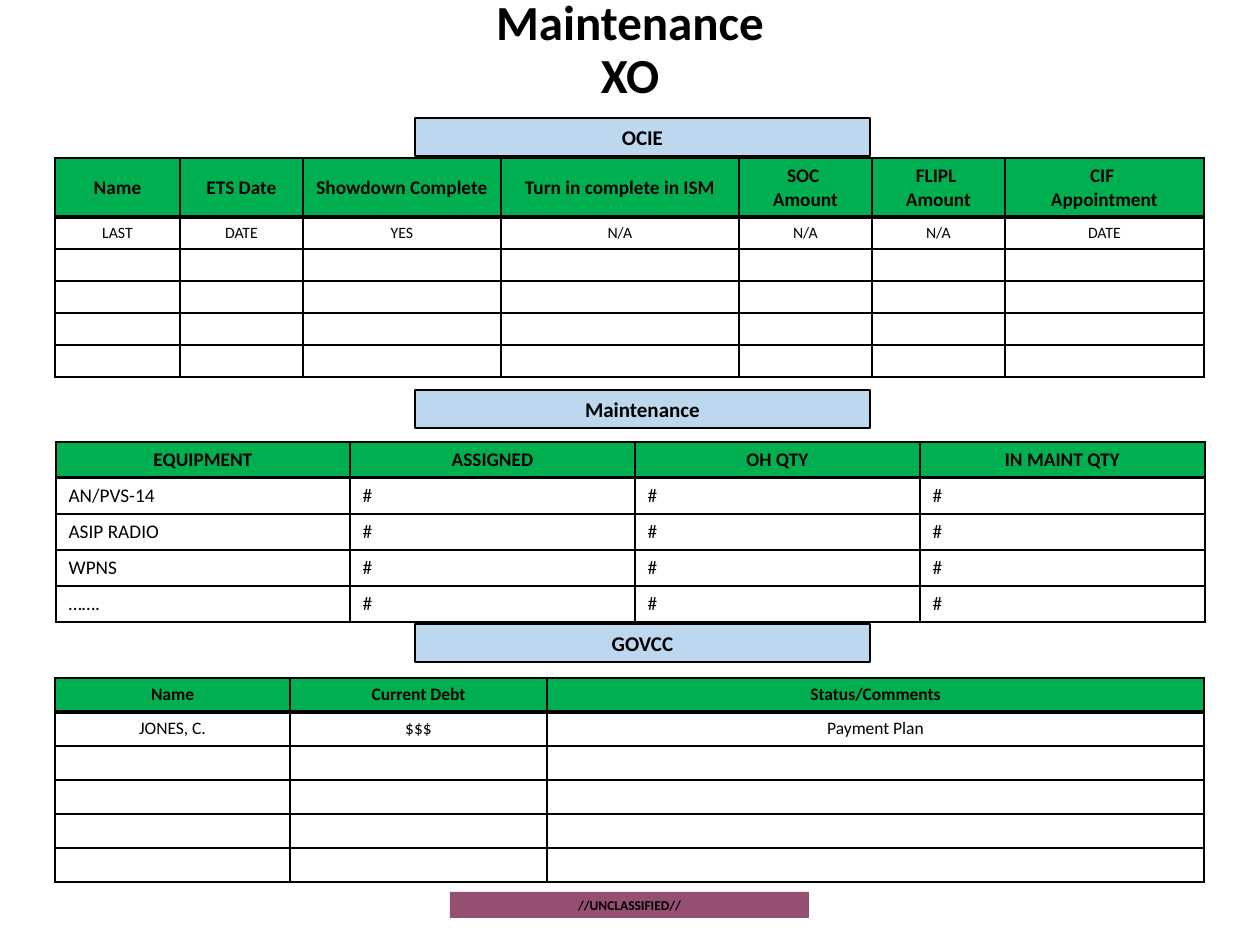
import lxml.etree
import pptx
import pptx.dml.color
import pptx.enum.shapes
import pptx.enum.text
import pptx.oxml.ns
import pptx.util

RGBColor = pptx.dml.color.RGBColor
BLACK = RGBColor(0x00, 0x00, 0x00)
WHITE = RGBColor(0xFF, 0xFF, 0xFF)
GREEN = RGBColor(0x00, 0xB0, 0x50)
LIGHT_BLUE = RGBColor(0xBD, 0xD7, 0xEE)
PLUM = RGBColor(0x95, 0x4F, 0x72)

CENTER = pptx.enum.text.PP_ALIGN.CENTER
LEFT = pptx.enum.text.PP_ALIGN.LEFT
MIDDLE = pptx.enum.text.MSO_ANCHOR.MIDDLE
PIXELS_PER_INCH = 126


def px(length):
    return pptx.util.Emu(round(length * 914400 / PIXELS_PER_INCH))


class SlideBuilder:
    font = "Calibri"

    def __init__(self, slide):
        self.slide = slide

    def add_run(self, paragraph, text, size, bold):
        run = paragraph.add_run()
        run.text = text
        run.font.name = self.font
        run.font.size = pptx.util.Pt(size)
        run.font.bold = bold
        run.font.color.rgb = BLACK

    def title(self, left, top, width, height, lines, size):
        shape = self.slide.shapes.add_textbox(px(left), px(top), px(width), px(height))
        frame = shape.text_frame
        frame.word_wrap = True
        frame.vertical_anchor = MIDDLE
        paragraph = frame.paragraphs[0]
        paragraph.alignment = CENTER
        paragraph.line_spacing = 0.9
        for index, line in enumerate(lines):
            if index:
                paragraph.add_line_break()
            self.add_run(paragraph, line, size, True)

    def box(self, left, top, width, height, text, size, fill, outlined=True):
        shape = self.slide.shapes.add_shape(
            pptx.enum.shapes.MSO_SHAPE.RECTANGLE, px(left), px(top), px(width), px(height))
        shape.shadow.inherit = False
        shape.fill.solid()
        shape.fill.fore_color.rgb = fill
        if outlined:
            shape.line.color.rgb = BLACK
            shape.line.width = pptx.util.Pt(1)
        else:
            shape.line.fill.background()
        frame = shape.text_frame
        frame.word_wrap = True
        frame.vertical_anchor = MIDDLE
        frame.margin_top = frame.margin_bottom = px(5)
        frame.paragraphs[0].alignment = CENTER
        self.add_run(frame.paragraphs[0], text, size, True)

    def borders(self, cell, bottom):
        properties = cell._tc.get_or_add_tcPr()
        widths = {"a:lnL": 1, "a:lnR": 1, "a:lnT": 1, "a:lnB": bottom}
        for index, (tag, width) in enumerate(widths.items()):
            line = lxml.etree.Element(pptx.oxml.ns.qn(tag), w=str(pptx.util.Pt(width)))
            fill = lxml.etree.SubElement(line, pptx.oxml.ns.qn("a:solidFill"))
            lxml.etree.SubElement(fill, pptx.oxml.ns.qn("a:srgbClr"), val=str(BLACK))
            properties.insert(index, line)

    def cell(self, cell, text, size, header, alignment):
        cell.fill.solid()
        cell.fill.fore_color.rgb = GREEN if header else WHITE
        cell.vertical_anchor = MIDDLE
        self.borders(cell, 2 if header else 1)
        for index, line in enumerate(text.split("\n")):
            frame = cell.text_frame
            paragraph = frame.add_paragraph() if index else frame.paragraphs[0]
            paragraph.alignment = alignment
            if line:
                self.add_run(paragraph, line, size, header)
            else:  # keeps an empty row as low as a filled one
                lxml.etree.SubElement(
                    paragraph._p, pptx.oxml.ns.qn("a:endParaRPr"), sz=str(size * 100))

    def table(self, left, top, columns, heights, rows, header_size, body_size, body_alignment):
        table = self.slide.shapes.add_table(
            len(heights), len(columns), px(left), px(top),
            px(sum(columns)), px(sum(heights))).table
        for column, width in zip(table.columns, columns):
            column.width = px(width)
        for row_index, height in enumerate(heights):
            table.rows[row_index].height = px(height)
            texts = rows[row_index] if row_index < len(rows) else [""] * len(columns)
            header = row_index == 0
            for column_index, text in enumerate(texts):
                self.cell(table.cell(row_index, column_index), text,
                          header_size if header else body_size, header,
                          CENTER if header else body_alignment)


def main():
    presentation = pptx.Presentation()
    presentation.slide_width = px(1260)
    presentation.slide_height = px(945)
    builder = SlideBuilder(presentation.slides.add_slide(presentation.slide_layouts[6]))

    # Classification footer and title
    builder.box(450, 892, 359, 26, "//UNCLASSIFIED//", 7.7, PLUM, outlined=False)
    builder.title(87, 11, 1086, 81, ["Maintenance", "XO"], 28)

    # Section headings
    for top, heading in ((118, "OCIE"), (390, "Maintenance"), (624, "GOVCC")):
        builder.box(415, top, 455, 38, heading, 12, LIGHT_BLUE)

    # Government card debts
    debts = [["Name", "Current Debt", "Status/Comments"],
             ["JONES, C.", "$$$", "Payment Plan"]]
    builder.table(55, 678, [235, 257, 657], [34] * 6, debts, 10, 10, CENTER)

    # Equipment turn-in
    turn_ins = [["Name", "ETS Date", "Showdown Complete", "Turn in complete in ISM",
                 "SOC \nAmount", "FLIPL \nAmount", "CIF \nAppointment"],
                ["LAST", "DATE", "YES", "N/A", "N/A", "N/A", "DATE"]]
    builder.table(55, 158, [125, 123, 198, 238, 133, 133, 199], [59] + [32] * 5,
                  turn_ins, 11, 9, CENTER)

    # Equipment in maintenance
    equipment = [["EQUIPMENT", "ASSIGNED", "OH QTY", "IN MAINT QTY"]]
    equipment += [[item] + ["#"] * 3 for item in ("AN/PVS-14", "ASIP RADIO", "WPNS", "…….")]
    builder.table(56, 442, [294] + [285] * 3, [36] * 5, equipment, 11, 11, LEFT)

    presentation.save("out.pptx")


if __name__ == "__main__":
    main()
